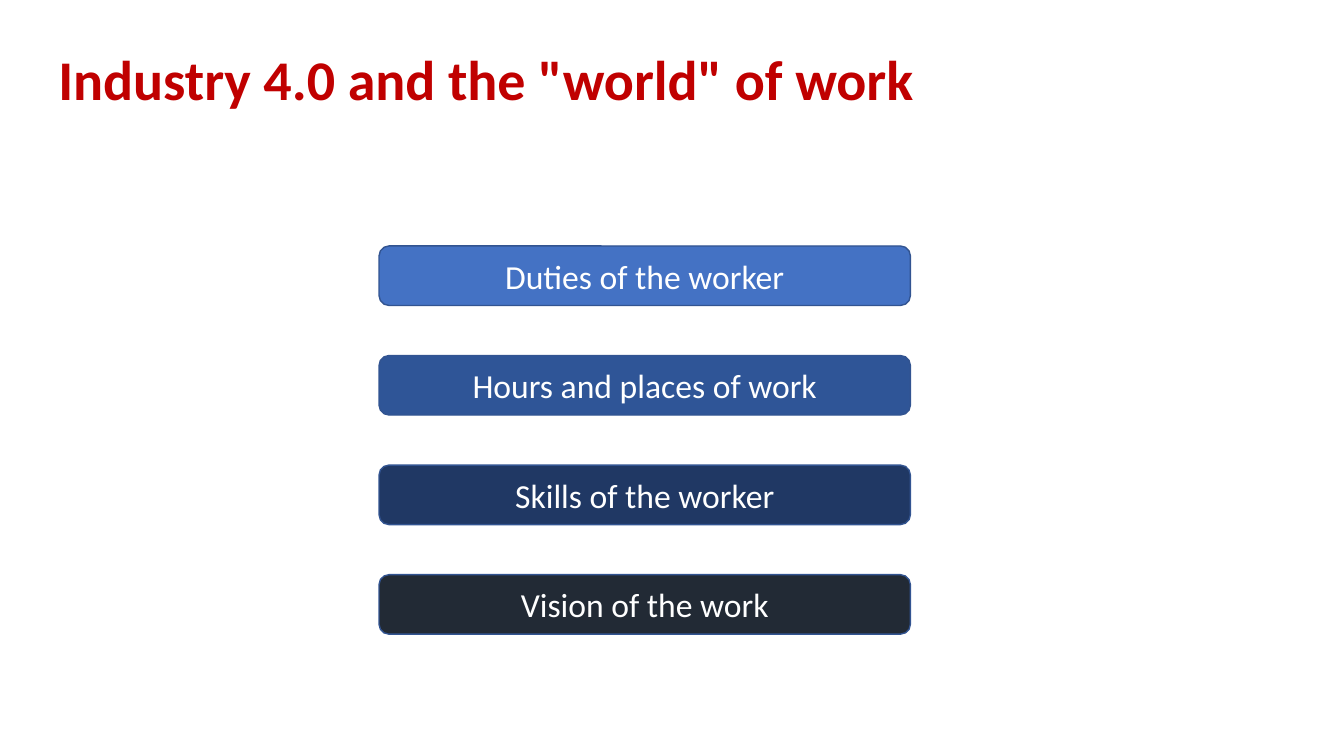
from pptx import Presentation
from pptx.dml.color import RGBColor
from pptx.enum.shapes import MSO_SHAPE
from pptx.enum.text import MSO_ANCHOR, MSO_AUTO_SIZE, PP_ALIGN
from pptx.util import Inches, Pt

ROUNDED = MSO_SHAPE.ROUNDED_RECTANGLE
MIDDLE = MSO_ANCHOR.MIDDLE
FIT_SHAPE = MSO_AUTO_SIZE.SHAPE_TO_FIT_TEXT
CENTER = PP_ALIGN.CENTER

FONT = "Calibri"
RED = RGBColor(0xC0, 0x00, 0x00)
WHITE = RGBColor(0xFF, 0xFF, 0xFF)
OUTLINE = RGBColor(0x32, 0x54, 0x91)

# Content: each topic with its shade, light to dark
TITLE = 'Industry 4.0 and the "world" of work'
TOPICS = [
    ("Duties of the worker", RGBColor(0x44, 0x72, 0xC4)),
    ("Hours and places of work", RGBColor(0x2F, 0x55, 0x97)),
    ("Skills of the worker", RGBColor(0x20, 0x38, 0x64)),
    ("Vision of the work", RGBColor(0x22, 0x2A, 0x35)),
]

# Layout in inches: one column of bars at an equal pitch
SLIDE_W, SLIDE_H = 13.33, 7.5
TITLE_BOX = (0.48, 0.39, 9.6, 0.77)
BAR_LEFT, BAR_TOP = 3.76, 2.44
BAR_W, BAR_H = 5.27, 0.59
BAR_PITCH = 1.087


def add_run(paragraph, text, size, color, bold=False):
    run = paragraph.add_run()
    run.text = text
    run.font.name = FONT
    run.font.size = Pt(size)
    run.font.bold = bold
    run.font.color.rgb = color


def add_title(slide):
    frame = slide.shapes.add_textbox(*map(Inches, TITLE_BOX)).text_frame
    frame.word_wrap = True
    frame.auto_size = FIT_SHAPE
    add_run(frame.paragraphs[0], TITLE, 40, RED, bold=True)


def add_topic(slide, row, topic, shade):
    box = (BAR_LEFT, BAR_TOP + row * BAR_PITCH, BAR_W, BAR_H)
    bar = slide.shapes.add_shape(ROUNDED, *map(Inches, box))
    bar.shadow.inherit = False
    bar.fill.solid()
    bar.fill.fore_color.rgb = shade
    bar.line.color.rgb = OUTLINE
    bar.line.width = Pt(1)
    frame = bar.text_frame
    frame.word_wrap = True
    frame.vertical_anchor = MIDDLE
    frame.paragraphs[0].alignment = CENTER
    add_run(frame.paragraphs[0], topic, 24, WHITE)


def main():
    deck = Presentation()
    deck.slide_width, deck.slide_height = Inches(SLIDE_W), Inches(SLIDE_H)
    slide = deck.slides.add_slide(deck.slide_layouts[6])
    add_title(slide)
    for row, (topic, shade) in enumerate(TOPICS):
        add_topic(slide, row, topic, shade)
    deck.save("out.pptx")


if __name__ == "__main__":
    main()
